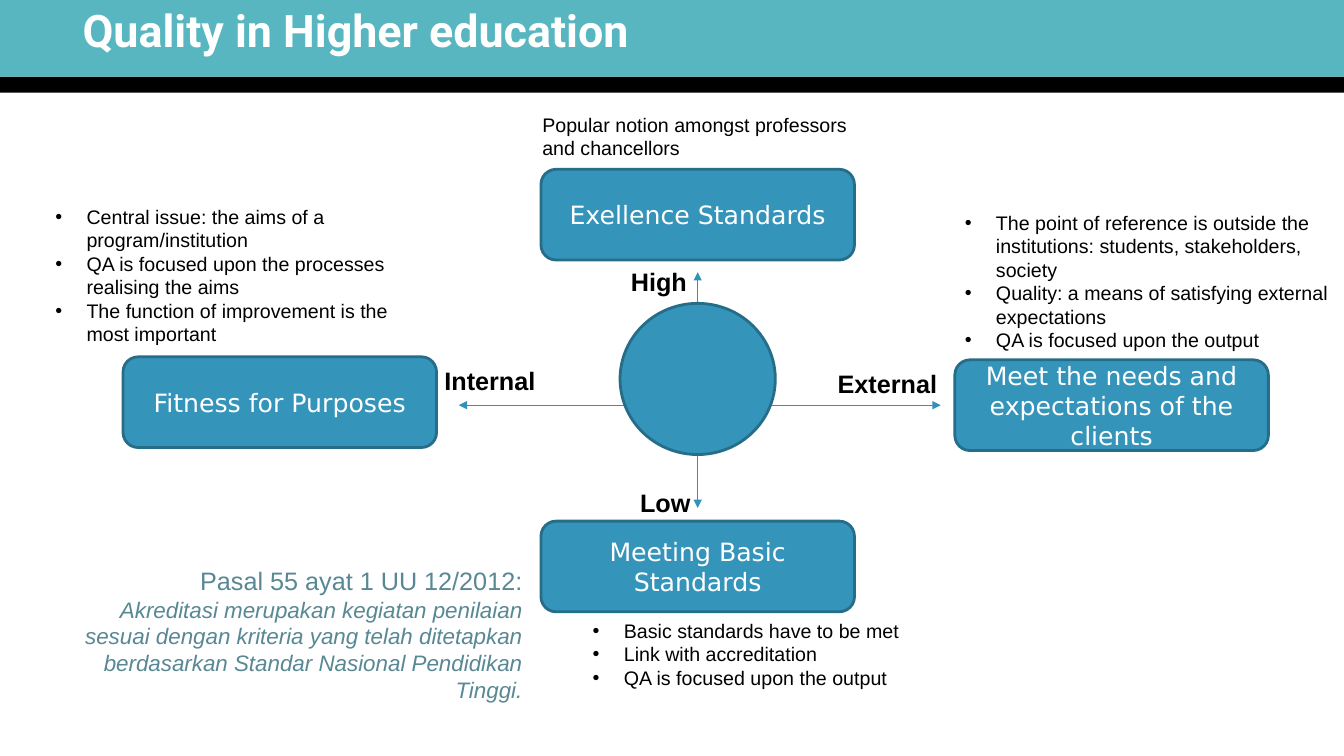
"""Builds the slide on quality in higher education: four notions around two axes."""
from lxml.etree import SubElement
from pptx import Presentation
from pptx.dml.color import RGBColor
from pptx.enum.shapes import MSO_CONNECTOR, MSO_SHAPE
from pptx.enum.text import MSO_ANCHOR, PP_ALIGN
from pptx.oxml.ns import qn
from pptx.util import Inches, Pt

CELL = Inches(0.01)
COLUMNS, ROWS = 1333, 750
AXIS_COLUMN, AXIS_ROW = 692, 402
BOX_WIDTH, BOX_HEIGHT = 311, 90
CENTRED = AXIS_COLUMN - BOX_WIDTH / 2
CIRCLE_WIDTH, CIRCLE_HEIGHT = 154, 150
INDENT = 31

deck = Presentation()
deck.slide_width, deck.slide_height = COLUMNS * CELL, ROWS * CELL
slide = deck.slides.add_slide(deck.slide_layouts[6])


def add_panel(preset, area, fill, outline=None):
    """Add a filled preset shape on the grid."""
    panel = slide.shapes.add_shape(preset, *[round(n * CELL) for n in area])
    panel.shadow.inherit = False
    panel.fill.solid()
    panel.fill.fore_color.rgb = RGBColor.from_string(fill)
    if outline:
        panel.line.color.rgb = RGBColor.from_string(outline)
        panel.line.width = Pt(2)
    else:
        panel.line.fill.background()
    return panel


def write(frame, lines, size, color="000000", font="Arial", bold=False,
          align=PP_ALIGN.LEFT, bulleted=False):
    """Fill a text frame, one paragraph per line."""
    frame.word_wrap = True
    frame.text = "\n".join(lines)
    for paragraph in frame.paragraphs:
        paragraph.alignment = align
        if bulleted:
            properties = paragraph._p.get_or_add_pPr()
            properties.set("marL", str(INDENT * CELL))
            properties.set("indent", str(-INDENT * CELL))
            SubElement(properties, qn("a:buFont"), typeface="Arial")
            SubElement(properties, qn("a:buChar"), char="•")
        for run in paragraph.runs:
            run.font.name = font
            run.font.size = Pt(size)
            run.font.bold = bold
            run.font.color.rgb = RGBColor.from_string(color)


add_panel(MSO_SHAPE.RECTANGLE, (0, 76, COLUMNS, 16), "000000")
add_panel(MSO_SHAPE.RECTANGLE, (0, 0, COLUMNS, 76), "58B6C0")

heading = slide.shapes.add_textbox(*[n * CELL for n in (72, -41, 942, 141)])
heading.text_frame.vertical_anchor = MSO_ANCHOR.MIDDLE
write(heading.text_frame, ["Quality in Higher education"], 32, "FFFFFF", "Roboto", bold=True)

notions = [
    ("Meeting Basic Standards", CENTRED, 517),
    ("Exellence Standards", CENTRED, 168),
    ("Meet the needs and expectations of the clients", 947, 357),
    ("Fitness for Purposes", 122, 354),
]
for notion, left, top in notions:
    box = add_panel(MSO_SHAPE.ROUNDED_RECTANGLE, (left, top, BOX_WIDTH, BOX_HEIGHT),
                    "3494BA", "266D8A")
    box.text_frame.vertical_anchor = MSO_ANCHOR.MIDDLE
    write(box.text_frame, [notion], 18, "FFFFFF", "DejaVu Sans", align=PP_ALIGN.CENTER)

remarks = [
    ((528, 107, 359, 57), False,
     ["Popular notion amongst professors", "and chancellors"]),
    ((578, 609, 433, 81), True,
     ["Basic standards have to be met", "Link with accreditation",
      "QA is focused upon the output"]),
    ((45, 198, 375, 151), True,
     ["Central issue: the aims of a program/institution",
      "QA is focused upon the processes realising the aims",
      "The function of improvement is the most important"]),
    ((947, 204, 415, 151), True,
     ["The point of reference is outside the institutions: students, stakeholders, society",
      "Quality: a means of satisfying external expectations",
      "QA is focused upon the output"]),
]
for area, bulleted, lines in remarks:
    remark = slide.shapes.add_textbox(*[n * CELL for n in area])
    write(remark.text_frame, lines, 14, bulleted=bulleted)

axes = [(455, AXIS_ROW, 933, AXIS_ROW), (AXIS_COLUMN, 270, AXIS_COLUMN, 504)]
for ends in axes:
    axis = slide.shapes.add_connector(MSO_CONNECTOR.STRAIGHT, *[n * CELL for n in ends])
    axis.line.color.rgb = RGBColor.from_string("3092B9")
    axis.line.width = Pt(0.75)
    for end in ("a:headEnd", "a:tailEnd"):
        SubElement(axis.line._get_or_add_ln(), qn(end), type="triangle")
    SubElement(axis._element.spPr, qn("a:effectLst"))

poles = [("Internal", 431, 358, 117), ("External", 821, 360, 130),
         ("Low", 625, 479, 117), ("High", 616, 259, 117)]
for pole, left, top, width in poles:
    label = slide.shapes.add_textbox(*[n * CELL for n in (left, top, width, 40)])
    write(label.text_frame, [pole], 18, bold=True)

add_panel(MSO_SHAPE.OVAL,
          (AXIS_COLUMN - CIRCLE_WIDTH / 2, 301, CIRCLE_WIDTH, CIRCLE_HEIGHT),
          "3494BA", "266D8A")

law = slide.shapes.add_textbox(*[n * CELL for n in (63, 556, 465, 148)])
write(law.text_frame,
      ["Pasal 55 ayat 1 UU 12/2012:",
       "Akreditasi merupakan kegiatan penilaian sesuai dengan kriteria yang telah "
       "ditetapkan berdasarkan Standar Nasional Pendidikan Tinggi."],
      18, "588894", align=PP_ALIGN.RIGHT)
article = law.text_frame.paragraphs[1].runs[0]
article.font.size = Pt(16)
article.font.italic = True

deck.save("out.pptx")
